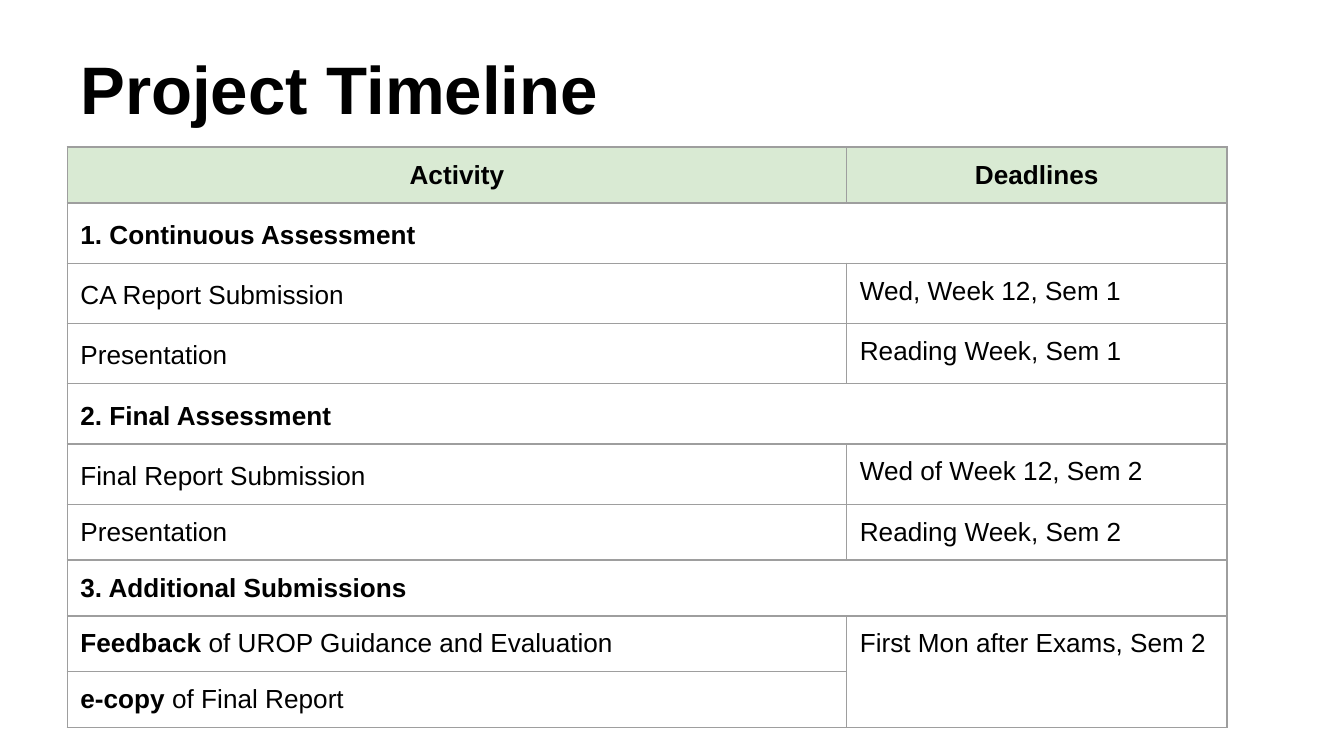
"""Build the project timeline slide."""
from dataclasses import dataclass

from lxml import etree
from pptx import Presentation
from pptx.dml.color import RGBColor
from pptx.enum.text import MSO_ANCHOR, MSO_AUTO_SIZE, PP_ALIGN
from pptx.oxml.ns import qn
from pptx.util import Cm, Pt

LEFT, CENTER = PP_ALIGN.LEFT, PP_ALIGN.CENTER
TOP, BOTTOM = MSO_ANCHOR.TOP, MSO_ANCHOR.BOTTOM
NO_AUTOFIT = MSO_AUTO_SIZE.NONE
TITLE_ONLY_LAYOUT = 5
BORDER_SIDES = ("a:lnL", "a:lnR", "a:lnT", "a:lnB")


@dataclass(frozen=True)
class Theme:
    """Colours, type sizes and spacing of the slide."""

    font: str = "Arial"
    text: str = "000000"
    header: str = "D9EAD3"
    border: str = "9E9E9E"
    border_width: Pt = Pt(0.75)
    title_size: Pt = Pt(36)
    table_size: Pt = Pt(14)
    loose_spacing: float = 1.15
    inset: Cm = Cm(0.25)


THEME = Theme()
COLUMN_WIDTHS = (14.73, 7.19)
ROW_HEIGHTS = (1.04,) * 6 + (0.99,) * 3 + (0.81,)
LOOSE_ROWS = range(1, 6)
HEADERS = ("Activity", "Deadlines")
ACTIVITIES = (
    ("1. Continuous Assessment", ""),
    ("", "CA Report Submission"),
    ("", "Presentation"),
    ("2. Final Assessment", ""),
    ("", "Final Report Submission"),
    ("", "Presentation"),
    ("3. Additional Submissions", ""),
    ("Feedback ", "of UROP Guidance and Evaluation"),
    ("e-copy ", "of Final Report"),
)
DEADLINES = {
    2: "Wed, Week 12, Sem 1",
    3: "Reading Week, Sem 1",
    5: "Wed of Week 12, Sem 2",
    6: "Reading Week, Sem 2",
    8: "First Mon after Exams, Sem 2",
}
MERGES = (((1, 0), (1, 1)), ((4, 0), (4, 1)), ((7, 0), (7, 1)), ((8, 1), (9, 1)))


def style_run(run, size, bold):
    """Apply the theme font to a run."""
    run.font.name = THEME.font
    run.font.size = size
    run.font.bold = bold
    run.font.color.rgb = RGBColor.from_string(THEME.text)


def add_title(slide, text):
    """Fill and place the title placeholder."""
    title = slide.shapes.title
    title.left, title.top = Cm(1.27), Cm(0.28)
    title.width, title.height = Cm(22.86), Cm(2.39)
    frame = title.text_frame
    frame.text = text
    frame.word_wrap = True
    frame.auto_size = NO_AUTOFIT
    frame.vertical_anchor = BOTTOM
    frame.margin_left = frame.margin_right = THEME.inset
    frame.margin_top = frame.margin_bottom = THEME.inset
    paragraph = frame.paragraphs[0]
    paragraph.alignment = LEFT
    style_run(paragraph.runs[0], THEME.title_size, True)


def add_borders(cell):
    """Draw a thin line on all four sides of a cell."""
    properties = cell._tc.get_or_add_tcPr()
    for position, side in enumerate(BORDER_SIDES):
        line = etree.Element(qn(side), w=str(int(THEME.border_width)))
        fill = etree.SubElement(line, qn("a:solidFill"))
        etree.SubElement(fill, qn("a:srgbClr"), val=THEME.border)
        properties.insert(position, line)


def format_cell(cell, color=None):
    """Set the fill, insets and borders of a cell."""
    cell.margin_left = cell.margin_right = THEME.inset
    cell.margin_top = cell.margin_bottom = THEME.inset
    cell.vertical_anchor = TOP
    if color:
        cell.fill.solid()
        cell.fill.fore_color.rgb = RGBColor.from_string(color)
    else:
        cell.fill.background()
    add_borders(cell)


def write_cell(cell, bold_text="", plain_text="", alignment=LEFT, spacing=None):
    """Write a bold part followed by a plain part in a cell."""
    paragraph = cell.text_frame.paragraphs[0]
    paragraph.alignment = alignment
    paragraph.line_spacing = spacing
    for text, bold in ((bold_text, True), (plain_text, False)):
        if text:
            run = paragraph.add_run()
            run.text = text
            style_run(run, THEME.table_size, bold)


def add_timeline(slide):
    """Add the table of activities and deadlines."""
    frame = slide.shapes.add_table(
        len(ROW_HEIGHTS), len(COLUMN_WIDTHS), Cm(1.27), Cm(2.78),
        Cm(sum(COLUMN_WIDTHS)), Cm(sum(ROW_HEIGHTS)),
    )
    table = frame.table
    table.first_row = table.horz_banding = False
    for column, width in zip(table.columns, COLUMN_WIDTHS):
        column.width = Cm(width)
    for index, (row, height) in enumerate(zip(table.rows, ROW_HEIGHTS)):
        row.height = Cm(height)
        for cell in row.cells:
            format_cell(cell, THEME.header if index == 0 else None)
    for start, end in MERGES:
        table.cell(*start).merge(table.cell(*end))
    for column, header in enumerate(HEADERS):
        write_cell(table.cell(0, column), header, alignment=CENTER)
    for row, (bold_text, plain_text) in enumerate(ACTIVITIES, start=1):
        spacing = THEME.loose_spacing if row in LOOSE_ROWS else None
        write_cell(table.cell(row, 0), bold_text, plain_text, spacing=spacing)
    for row, deadline in DEADLINES.items():
        write_cell(table.cell(row, 1), plain_text=deadline)


def main():
    """Create and save the presentation."""
    presentation = Presentation()
    presentation.slide_width = Cm(25.4)
    presentation.slide_height = Cm(14.29)
    layout = presentation.slide_layouts[TITLE_ONLY_LAYOUT]
    slide = presentation.slides.add_slide(layout)
    add_title(slide, "Project Timeline")
    add_timeline(slide)
    presentation.save("out.pptx")


if __name__ == "__main__":
    main()
